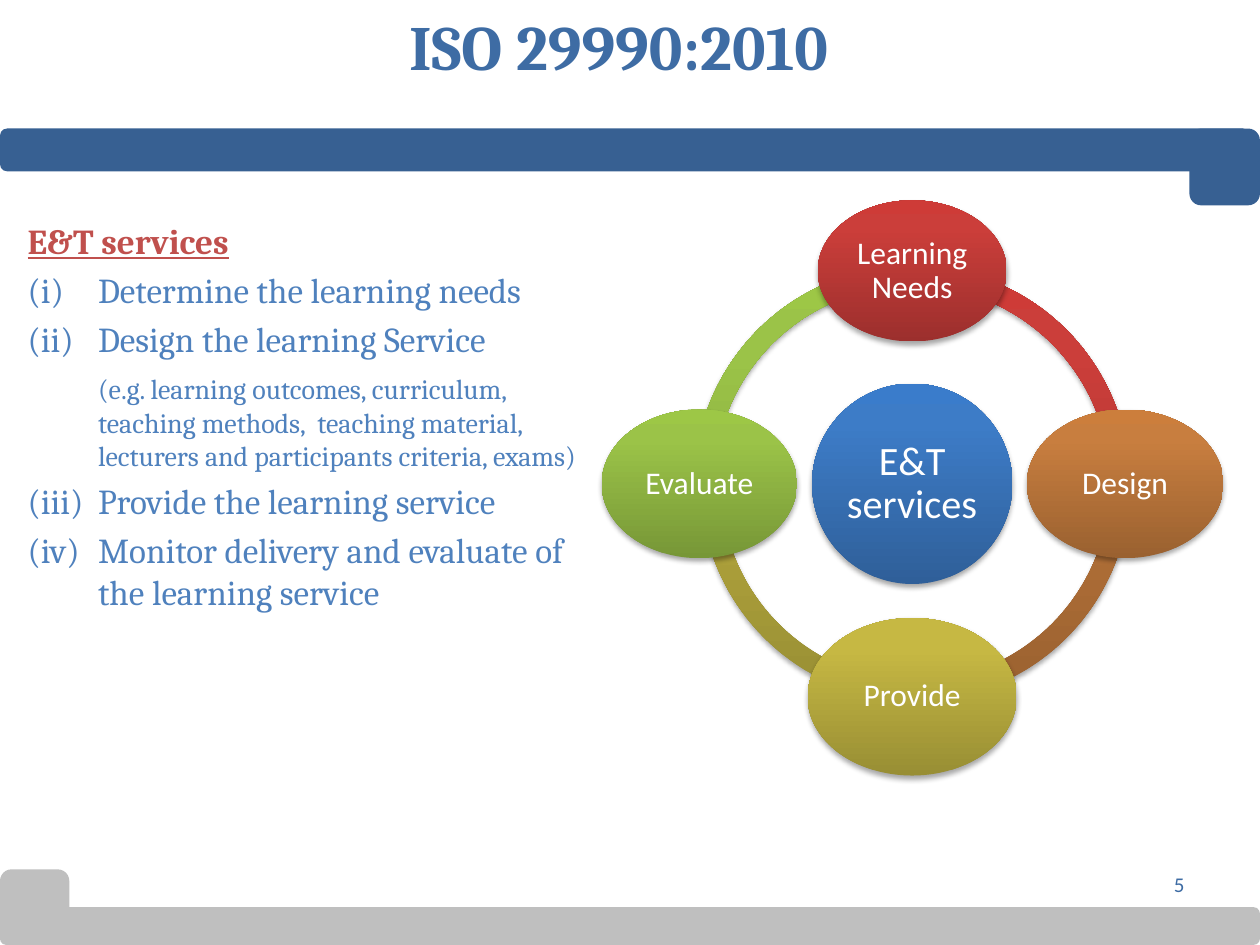
from copy import deepcopy
from dataclasses import dataclass
from math import cos, radians, sin

from lxml.etree import SubElement
from pptx import Presentation
from pptx.dml.color import RGBColor
from pptx.enum.shapes import MSO_SHAPE
from pptx.enum.text import MSO_ANCHOR, PP_ALIGN
from pptx.oxml.ns import qn
from pptx.util import Inches, Pt

COLS, ROWS = 100, 75


@dataclass(frozen=True)
class Theme:
    serif: str = "Cambria"
    sans: str = "Calibri"
    title: str = "3E6CA4"
    heading: str = "C0504D"
    body: str = "4F81BD"
    white: str = "FFFFFF"
    header: str = "376092"
    footer: str = "BFBFBF"
    blue: tuple = ("2F5F99", "3D7CC7", "3A7CCB")
    red: tuple = ("9C2F2D", "CB3E3A", "CE3B37")
    orange: tuple = ("9A6130", "C87E3F", "CC7E3C")
    yellow: tuple = ("988E34", "C6B843", "C9BB41")
    green: tuple = ("779737", "9BC348", "9DC746")
    title_size: int = 36
    hub_size: int = 23
    body_size: int = 20
    node_size: int = 18
    note_size: int = 16
    number_size: int = 12


@dataclass(frozen=True)
class Box:
    col: float
    row: float
    cols: float
    rows: float


@dataclass(frozen=True)
class Bar:
    box: Box
    color: str


@dataclass(frozen=True)
class Node:
    label: str
    angle: int
    cols: float
    rows: float
    colors: tuple


@dataclass(frozen=True)
class Arc:
    start: int
    end: int
    colors: tuple
    shift: float = 0


@dataclass(frozen=True)
class Item:
    text: str
    number: int = 0
    indent: float = 0.56
    hanging: bool = True
    before: float = 4
    size: int = 20
    color: str = Theme.body
    bold: bool = False
    underline: bool = False


T = Theme()
CENTER_COL, CENTER_ROW = 72.4, 38.4
ORBIT, RING, HUB = 16.9, 34.6, 15.9

BARS = [
    Bar(Box(0, 10.2, 99.2, 3.4), T.header),
    Bar(Box(94.4, 10.2, 5.6, 6.1), T.header),
    Bar(Box(0, 72, 100, 3), T.footer),
    Bar(Box(0, 69, 5.5, 5.7), T.footer),
]
ARCS = [
    Arc(180, 270, T.green),
    Arc(90, 180, T.yellow, 0.5),
    Arc(0, 90, T.orange),
    Arc(270, 0, T.red),
]
NODES = [
    Node("Learning Needs", 270, 15, 11.2, T.red),
    Node("Design", 0, 15.6, 11.8, T.orange),
    Node("Provide", 90, 16.6, 12.5, T.yellow),
    Node("Evaluate", 180, 15.5, 11.8, T.green),
]
ITEMS = [
    Item("E&T services", indent=0.38, before=0, color=T.heading, bold=True, underline=True),
    Item("Determine the learning needs", number=1),
    Item("Design the learning Service", number=2),
    Item("(e.g. learning outcomes, curriculum, teaching methods,  teaching material, "
         "lecturers and participants criteria, exams)",
         hanging=False, before=7, size=T.note_size),
    Item("Provide the learning service", number=3),
    Item("(iv)\tMonitor delivery and evaluate of the learning service"),
]


def place(prs, box: Box) -> tuple:
    w, h = prs.slide_width / COLS, prs.slide_height / ROWS
    return tuple(round(v) for v in (box.col * w, box.row * h, box.cols * w, box.rows * h))


def centered(col: float, row: float, cols: float, rows: float) -> Box:
    return Box(col - cols / 2, row - rows / 2, cols, rows)


def write(p, text: str, *, size: int, color: str, font: str = T.sans,
          bold: bool = False, underline: bool = False, align=PP_ALIGN.LEFT) -> None:
    p.alignment = align
    r = p.add_run()
    r.text = text
    r.font.name, r.font.size = font, Pt(size)
    r.font.bold, r.font.underline = bold, underline
    r.font.color.rgb = RGBColor.from_string(color)


def add_text(prs, s, box: Box, anchor=MSO_ANCHOR.TOP):
    tf = s.shapes.add_textbox(*place(prs, box)).text_frame
    tf.word_wrap = True
    tf.vertical_anchor = anchor
    return tf


def add_flat(prs, s, kind, box: Box):
    sp = s.shapes.add_shape(kind, *place(prs, box))
    sp.line.fill.background()
    sp.shadow.inherit = False
    return sp


def add_bar(prs, s, bar: Bar) -> None:
    sp = add_flat(prs, s, MSO_SHAPE.ROUNDED_RECTANGLE, bar.box)
    sp.fill.solid()
    sp.fill.fore_color.rgb = RGBColor.from_string(bar.color)


def add_glossy(prs, s, kind, box: Box, colors: tuple):
    sp = add_flat(prs, s, kind, box)
    sp.fill.gradient()
    sp.fill.gradient_angle = 90
    stops = sp.element.spPr.find(qn("a:gradFill")).find(qn("a:gsLst"))
    stops.append(deepcopy(stops[-1]))
    for stop, position, color in zip(sp.fill.gradient_stops, (0, 0.8, 1), colors):
        stop.position = position
        stop.color.rgb = RGBColor.from_string(color)
    effects = sp.element.spPr.find(qn("a:effectLst"))
    shadow = SubElement(effects, qn("a:outerShdw"), blurRad=str(Pt(3.1)),
                        dist=str(Pt(1.8)), dir="5400000", rotWithShape="0")
    black = SubElement(shadow, qn("a:srgbClr"), val="000000")
    SubElement(black, qn("a:alpha"), val="35000")
    return sp


def add_arc(prs, s, arc: Arc) -> None:
    box = centered(CENTER_COL + arc.shift, CENTER_ROW, RING, RING)
    sp = add_glossy(prs, s, MSO_SHAPE.BLOCK_ARC, box, arc.colors)
    for i, value in enumerate((arc.start * 0.6, arc.end * 0.6, 0.046)):
        sp.adjustments[i] = value


def add_ellipse(prs, s, box: Box, label: str, colors: tuple, size: int) -> None:
    tf = add_glossy(prs, s, MSO_SHAPE.OVAL, box, colors).text_frame
    tf.word_wrap = True
    tf.vertical_anchor = MSO_ANCHOR.MIDDLE
    tf.margin_left = tf.margin_right = tf.margin_top = tf.margin_bottom = Inches(0.03)
    p = tf.paragraphs[0]
    p.line_spacing = 0.9
    write(p, label, size=size, color=T.white, align=PP_ALIGN.CENTER)


def add_node(prs, s, node: Node) -> None:
    a = radians(node.angle)
    box = centered(CENTER_COL + ORBIT * cos(a), CENTER_ROW + ORBIT * sin(a),
                   node.cols, node.rows)
    add_ellipse(prs, s, box, node.label, node.colors, T.node_size)


def add_item(p, item: Item) -> None:
    pPr = p._p.get_or_add_pPr()
    pPr.set("marL", str(Inches(item.indent)))
    pPr.set("indent", str(-Inches(item.indent) if item.hanging else 0))
    if item.number:
        SubElement(pPr, qn("a:buFont"), typeface=T.serif)
        SubElement(pPr, qn("a:buAutoNum"), type="romanLcParenBoth", startAt=str(item.number))
    else:
        SubElement(pPr, qn("a:buNone"))
    p.space_before = Pt(item.before)
    write(p, item.text, size=item.size, color=item.color, font=T.serif,
          bold=item.bold, underline=item.underline)


def main() -> None:
    prs = Presentation()
    prs.slide_width, prs.slide_height = Inches(10), Inches(7.5)
    s = prs.slides.add_slide(prs.slide_layouts[6])
    for bar in BARS:
        add_bar(prs, s, bar)
    tf = add_text(prs, s, Box(4.1, 0.1, 90, 10.1))
    write(tf.paragraphs[0], "ISO 29990:2010", size=T.title_size, color=T.title,
          font=T.serif, bold=True, align=PP_ALIGN.CENTER)
    tf = add_text(prs, s, Box(1.2, 16.9, 46.5, 40.1))
    for i, item in enumerate(ITEMS):
        add_item(tf.add_paragraph() if i else tf.paragraphs[0], item)
    for arc in ARCS:
        add_arc(prs, s, arc)
    add_ellipse(prs, s, centered(CENTER_COL, CENTER_ROW, HUB, HUB),
                "E&T services", T.blue, T.hub_size)
    for node in NODES:
        add_node(prs, s, node)
    tf = add_text(prs, s, Box(71.7, 68.2, 23.3, 4), MSO_ANCHOR.MIDDLE)
    write(tf.paragraphs[0], "5", size=T.number_size, color=T.title, align=PP_ALIGN.RIGHT)
    prs.save("out.pptx")


if __name__ == "__main__":
    main()
